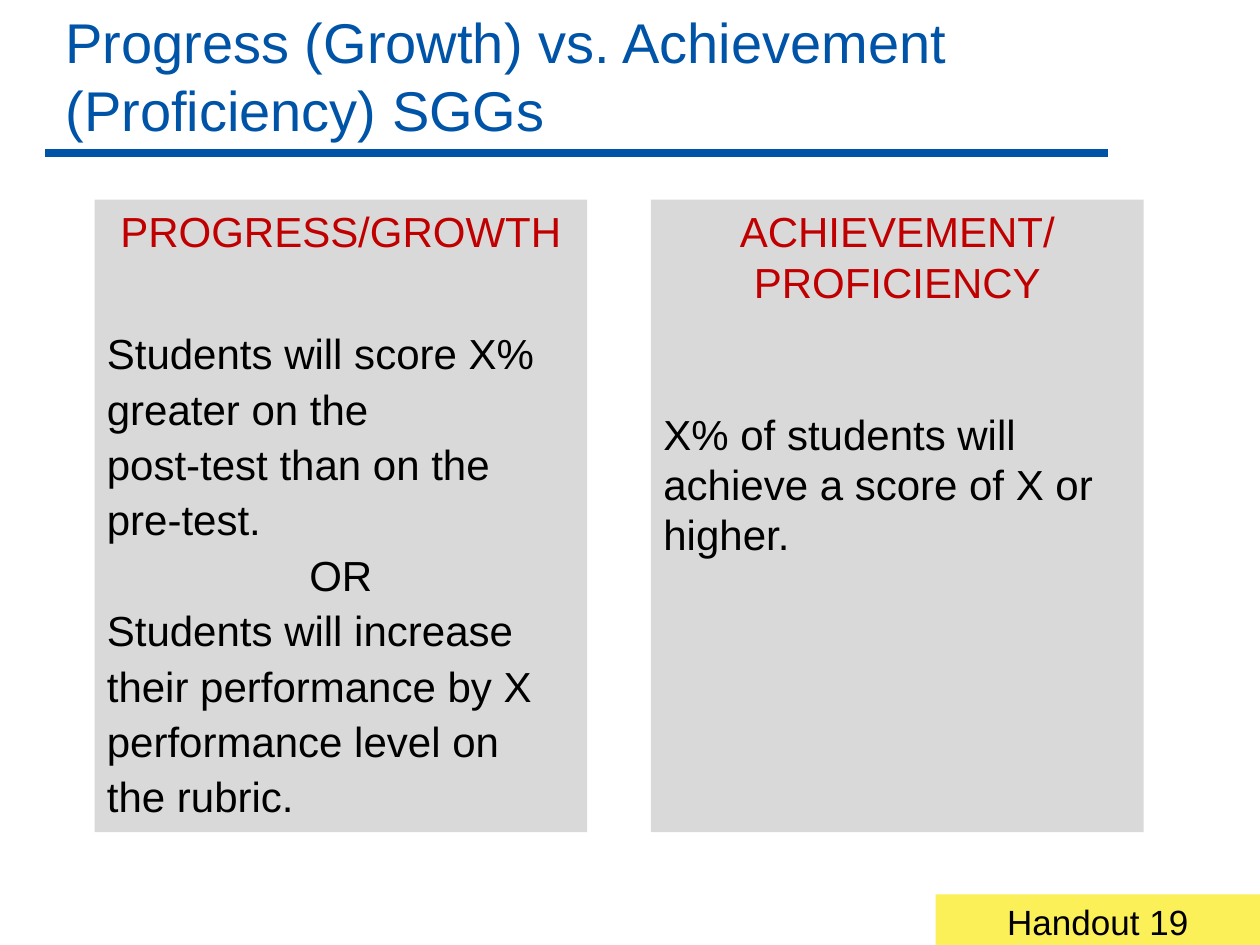
"""Build the slide comparing progress and achievement student growth goals."""
from lxml import etree
from pptx import Presentation
from pptx.dml.color import RGBColor
from pptx.enum.shapes import MSO_CONNECTOR, MSO_SHAPE
from pptx.enum.text import MSO_ANCHOR, MSO_AUTO_SIZE, PP_ALIGN
from pptx.oxml.ns import qn
from pptx.util import Pt

LEFT, CENTER = PP_ALIGN.LEFT, PP_ALIGN.CENTER
TOP, BOTTOM = MSO_ANCHOR.TOP, MSO_ANCHOR.BOTTOM
RECT, STRAIGHT = MSO_SHAPE.RECTANGLE, MSO_CONNECTOR.STRAIGHT
BLUE, RED, BLACK, GRAY, YELLOW = "0054A8", "C00000", "000000", "D9D9D9", "FCF059"


def style(p, size, color, align=LEFT):
    p.alignment = align
    for r in p.runs:
        r.font.name = "Arial"
        r.font.size = Pt(size)
        r.font.color.rgb = RGBColor.from_string(color)


def add_box(s, x, y, w, h, fill):
    sp = s.shapes.add_shape(RECT, Pt(x), Pt(y), Pt(w), Pt(h))
    sp.shadow.inherit = False
    sp.fill.solid()
    sp.fill.fore_color.rgb = RGBColor.from_string(fill)
    sp.line.fill.background()
    sp.text_frame.word_wrap = True
    sp.text_frame.vertical_anchor = TOP
    return sp


prs = Presentation()
prs.slide_width, prs.slide_height = Pt(720), Pt(540)
s = prs.slides.add_slide(prs.slide_layouts[5])

rule = s.shapes.add_connector(STRAIGHT, Pt(25.9), Pt(87.3), Pt(632.9), Pt(87.3))
rule.line.color.rgb = RGBColor.from_string(BLUE)
rule.line.width = Pt(4.5)
etree.SubElement(rule._element.spPr, qn("a:effectLst"))

title = s.shapes.title
title.left, title.top, title.width, title.height = Pt(30.2), Pt(0), Pt(689.8), Pt(85)
tf = title.text_frame
tf.text = "Progress (Growth) vs. Achievement (Proficiency) SGGs"
tf.word_wrap = True
tf.auto_size = MSO_AUTO_SIZE.NONE
tf.vertical_anchor = BOTTOM
style(tf.paragraphs[0], 32, BLUE)

columns = [
    (54, "PROGRESS/GROWTH", 38, 1.1, [
        "Students will score X%", "greater on the", "post-test than on the",
        "pre-test.", "OR", "Students will increase", "their performance by X",
        "performance level on", "the rubric."]),
    (372, "ACHIEVEMENT/ PROFICIENCY", 58, 1.0, [
        "X% of students will", "achieve a score of X or", "higher."]),
]
for x, heading, gap, spacing, lines in columns:
    tf = add_box(s, x, 114, 281.5, 361.5, GRAY).text_frame
    tf.text = "\n".join([heading] + lines)
    style(tf.paragraphs[0], 24, RED, CENTER)
    for p in tf.paragraphs[1:]:
        style(p, 24, BLACK, CENTER if p.text == "OR" else LEFT)
        p.line_spacing = spacing
    tf.paragraphs[1].space_before = Pt(gap)

tf = add_box(s, 534.7, 511, 185.3, 31.5, YELLOW).text_frame
tf.text = "Handout 19"
tf.auto_size = MSO_AUTO_SIZE.SHAPE_TO_FIT_TEXT
style(tf.paragraphs[0], 20, BLACK, CENTER)

prs.save("out.pptx")
